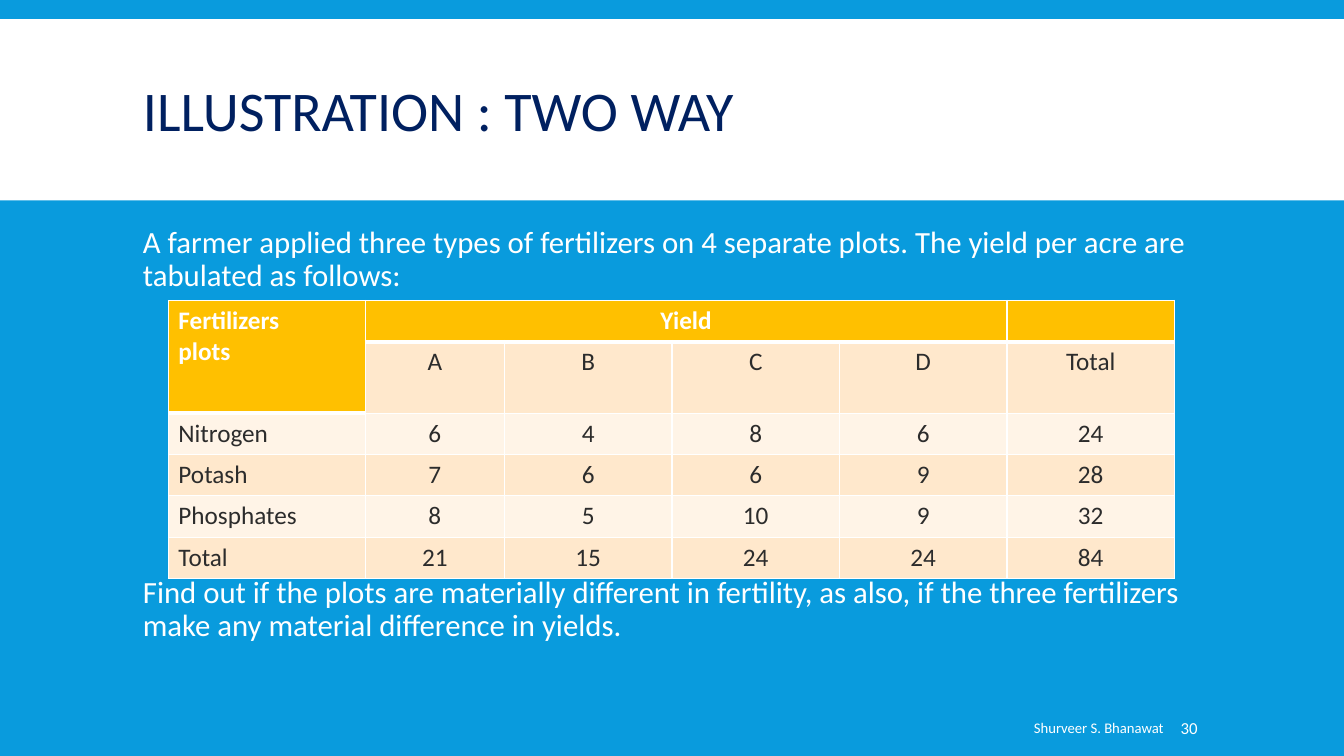
import dataclasses

import lxml.etree
import pptx
import pptx.dml.color
import pptx.enum.shapes
import pptx.enum.text
import pptx.oxml.ns
import pptx.util

ALIGN = pptx.enum.text.PP_ALIGN
ANCHOR = pptx.enum.text.MSO_ANCHOR


@dataclasses.dataclass(frozen=True)
class Theme:
    """Colours, font and type sizes of the slide."""
    font: str = "Calibri"
    background: str = "099BDD"
    white: str = "FFFFFF"
    title: str = "002060"
    ink: str = "2C2C2C"
    header: str = "FFC000"
    bands: tuple = ("FFF4E7", "FFE8CC")
    title_size: float = 40
    body_size: float = 22
    table_size: float = 18
    footer_size: float = 10.5
    number_size: float = 12
    thin: float = 1
    thick: float = 3


THEME = Theme()
YIELD_ROWS = [
    ["Fertilizers\nplots", "Yield", "", "", "", ""],
    ["", "A", "B", "C", "D", "Total"],
    ["Nitrogen", "6", "4", "8", "6", "24"],
    ["Potash", "7", "6", "6", "9", "28"],
    ["Phosphates", "8", "5", "10", "9", "32"],
    ["Total", "21", "15", "24", "24", "84"],
]
COLUMN_WEIGHTS = [1.95, 1.38] + [1.66] * 4
ROW_WEIGHTS = [1, 1.73] + [1] * 4


def area(deck, left, top, width, height):
    """Turn percentages of the slide into a box of lengths."""
    across, down = deck.slide_width / 100, deck.slide_height / 100
    return tuple(map(round, (left * across, top * down, width * across, height * down)))


def rgb(colour):
    """Return the colour object of a hex string."""
    return pptx.dml.color.RGBColor.from_string(colour)


def style(paragraph, size, colour, bold=False, align=ALIGN.LEFT):
    """Set the font and alignment of one paragraph."""
    paragraph.alignment = align
    font = paragraph.font
    font.name, font.size, font.bold = THEME.font, pptx.util.Pt(size), bold
    font.color.rgb = rgb(colour)


def add_text(slide, box, wording, size, colour, anchor=ANCHOR.TOP,
             align=ALIGN.LEFT, spacing=1.0, left_inset=0.1):
    """Place one wrapped paragraph in the given box."""
    frame = slide.shapes.add_textbox(*box).text_frame
    frame.word_wrap = True
    frame.vertical_anchor = anchor
    frame.margin_left = pptx.util.Inches(left_inset)
    paragraph = frame.paragraphs[0]
    paragraph.text = wording
    paragraph.line_spacing = spacing
    style(paragraph, size, colour, align=align)


def add_title_band(slide, band_box, title_box):
    """Draw the white band and the title on it."""
    band = slide.shapes.add_shape(pptx.enum.shapes.MSO_SHAPE.RECTANGLE, *band_box)
    band.shadow.inherit = False
    band.fill.solid()
    band.fill.fore_color.rgb = rgb(THEME.white)
    band.line.fill.background()
    add_text(slide, title_box, "ILLUSTRATION : TWO WAY", THEME.title_size,
             THEME.title, ANCHOR.MIDDLE, spacing=0.85)


def is_header(row, column):
    """Tell whether a cell belongs to the gold header."""
    return row == 0 or (row == 1 and column == 0)


def add_borders(cell, top, bottom):
    """Give a cell white borders with the given top and bottom widths."""
    properties = cell._tc.get_or_add_tcPr()
    widths = {"lnL": THEME.thin, "lnR": THEME.thin, "lnT": top, "lnB": bottom}
    for side, width in widths.items():
        line = lxml.etree.SubElement(properties, pptx.oxml.ns.qn(f"a:{side}"),
                                     w=str(pptx.util.Pt(width)))
        fill = lxml.etree.SubElement(line, pptx.oxml.ns.qn("a:solidFill"))
        lxml.etree.SubElement(fill, pptx.oxml.ns.qn("a:srgbClr"), val=THEME.white)


def fill_cell(cell, row, column, wording):
    """Write and colour one cell by its place in the table."""
    header = is_header(row, column)
    below_header = row > 0 and is_header(row - 1, column)
    add_borders(cell, THEME.thick if below_header else THEME.thin,
                THEME.thick if header else THEME.thin)
    cell.fill.solid()
    cell.fill.fore_color.rgb = rgb(THEME.header if header else THEME.bands[row % 2])
    cell.text = wording
    for paragraph in cell.text_frame.paragraphs:
        style(paragraph, THEME.table_size, THEME.white if header else THEME.ink,
              header, ALIGN.CENTER if column else ALIGN.LEFT)


def add_yield_table(slide, box):
    """Build the table of yields in the given box."""
    left, top, width, height = box
    yields = slide.shapes.add_table(len(ROW_WEIGHTS), len(COLUMN_WEIGHTS), *box).table
    yields.first_row = yields.horz_banding = False
    for column, weight in zip(yields.columns, COLUMN_WEIGHTS):
        column.width = round(width * weight / sum(COLUMN_WEIGHTS))
    for row, weight in zip(yields.rows, ROW_WEIGHTS):
        row.height = round(height * weight / sum(ROW_WEIGHTS))
    for row, wordings in enumerate(YIELD_ROWS):
        for column, wording in enumerate(wordings):
            fill_cell(yields.cell(row, column), row, column, wording)
    yields.cell(0, 0).merge(yields.cell(1, 0))
    yields.cell(0, 1).merge(yields.cell(0, 4))


def add_footer(slide, author_box, number_box):
    """Place the author and the slide number."""
    add_text(slide, author_box, "Shurveer S. Bhanawat", THEME.footer_size,
             THEME.white, ANCHOR.MIDDLE, ALIGN.RIGHT)
    add_text(slide, number_box, "30", THEME.number_size, THEME.white,
             ANCHOR.MIDDLE, left_inset=0.05)


def main():
    """Build the slide and save it."""
    deck = pptx.Presentation()
    deck.slide_width, deck.slide_height = pptx.util.Inches(13.33), pptx.util.Inches(7.5)
    slide = deck.slides.add_slide(deck.slide_layouts[6])
    slide.background.fill.solid()
    slide.background.fill.fore_color.rgb = rgb(THEME.background)

    add_title_band(slide, area(deck, 0, 2.53, 100, 24), area(deck, 9.9, 4.13, 80.27, 22))
    statements = {
        29.33: "A farmer applied three types of fertilizers on 4 separate plots. "
               "The yield per acre are tabulated as follows:",
        75.6: "Find out if the plots are materially different in fertility, as also, "
              "if the three fertilizers make any material difference in yields.",
    }
    for top, wording in statements.items():
        add_text(slide, area(deck, 9.9, top, 80.27, 10.4), wording,
                 THEME.body_size, THEME.white, spacing=0.9)
    add_yield_table(slide, area(deck, 12.53, 39.73, 74.87, 36.8))
    add_footer(slide, area(deck, 45.91, 93.6, 41.41, 5.33),
               area(deck, 87.47, 93.6, 7.73, 5.33))
    deck.save("out.pptx")


if __name__ == "__main__":
    main()
